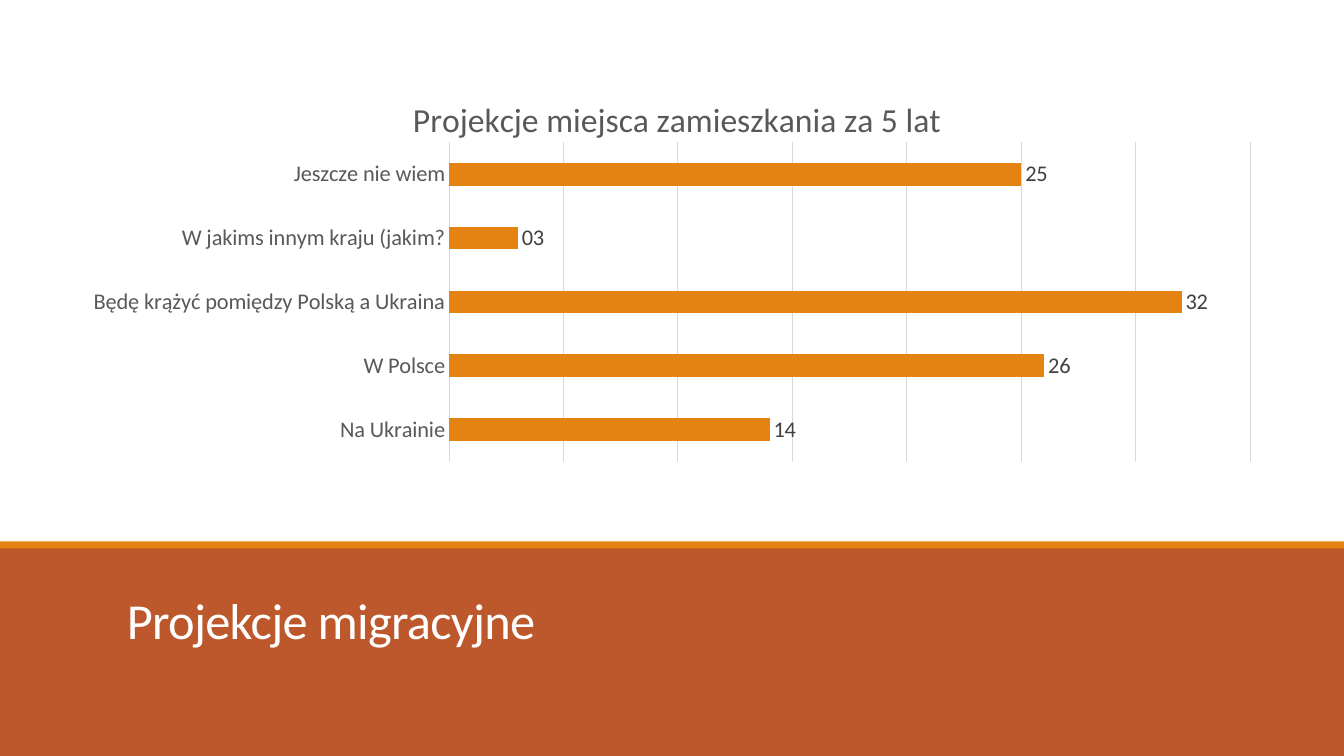
from lxml import etree
from pptx import Presentation, util as u
from pptx.chart.data import CategoryChartData
from pptx.dml.color import RGBColor
from pptx.enum import chart as charts, shapes, text
from pptx.oxml import ns

ORANGE = RGBColor(0xE4, 0x83, 0x12)
RUST = RGBColor(0xBD, 0x58, 0x2C)
WHITE = RGBColor(0xFF, 0xFF, 0xFF)
GRID_GREY = RGBColor(0xD9, 0xD9, 0xD9)
TEXT_GREY = RGBColor(0x59, 0x59, 0x59)
LABEL_GREY = RGBColor(0x40, 0x40, 0x40)

RESIDENCE_PLANS = {
    "Na Ukrainie": 14,
    "W Polsce": 26,
    "Będę krążyć pomiędzy Polską a Ukraina": 32,
    "W jakims innym kraju (jakim?": 3,
    "Jeszcze nie wiem": 25,
}


def place_chart_part(part, index, mode="edge", **shares):
    """Fix a title or plot area at shares of the chart's size."""
    for old in part.findall(ns.qn("c:layout")):
        part.remove(old)
    layout = etree.Element(ns.qn("c:layout"))
    manual = etree.SubElement(layout, ns.qn("c:manualLayout"))
    if "w" in shares:
        etree.SubElement(manual, ns.qn("c:layoutTarget"), val="inner")
    for tag in ("xMode", "yMode"):
        etree.SubElement(manual, ns.qn(f"c:{tag}"), val=mode)
    for tag, share in shares.items():
        etree.SubElement(manual, ns.qn(f"c:{tag}"), val=str(share))
    part.insert(index, layout)


class SlideBuilder:
    """Style and slide; lengths are columns and rows of a one-inch grid."""

    FONT = "Calibri"
    COLUMNS, ROWS = 13.33, 7.5

    def __init__(self):
        self.deck = Presentation()
        self.deck.slide_width = u.Inches(self.COLUMNS)
        self.deck.slide_height = u.Inches(self.ROWS)
        self.slide = self.deck.slides.add_slide(self.deck.slide_layouts[6])

    def box(self, *cells):
        return [u.Inches(cell) for cell in cells]

    def style(self, font, size, color):
        font.name, font.size, font.bold = self.FONT, u.Pt(size), False
        font.color.rgb = color

    def band(self, top, height, color):
        """Fill the slide's whole width with one colour."""
        band = self.slide.shapes.add_shape(
            shapes.MSO_SHAPE.RECTANGLE, *self.box(0, top, self.COLUMNS, height))
        band.shadow.inherit = False
        band.fill.solid()
        band.fill.fore_color.rgb = color
        band.line.fill.background()

    def heading(self, wording, *cells):
        frame = self.slide.shapes.add_textbox(*self.box(*cells)).text_frame
        frame.word_wrap = True
        frame.vertical_anchor = text.MSO_ANCHOR.BOTTOM
        frame.text = wording
        paragraph = frame.paragraphs[0]
        paragraph.line_spacing = 0.85
        run = paragraph.runs[0]
        self.style(run.font, 36, WHITE)
        run.font._element.set("spc", "-50")

    def bar_chart(self, title, values, *cells):
        data = CategoryChartData()
        data.categories = list(values)
        data.add_series("Series 1", list(values.values()))
        chart = self.slide.shapes.add_chart(
            charts.XL_CHART_TYPE.BAR_CLUSTERED, *self.box(*cells), data).chart
        chart.has_legend = False
        self.style(chart.font, 16, TEXT_GREY)

        chart.has_title = True
        title_frame = chart.chart_title.text_frame
        title_frame.text = title
        self.style(title_frame.paragraphs[0].runs[0].font, 24, TEXT_GREY)
        place_chart_part(chart.chart_title._element, 1, x=0.28, y=0.05)
        plot_area = chart._chartSpace.chart.plotArea
        place_chart_part(plot_area, 0, x=0.315, y=0.18, w=0.665, h=0.8)

        answers, scale = chart.category_axis, chart.value_axis
        answers.major_tick_mark = charts.XL_TICK_MARK.NONE
        self.style(answers.tick_labels.font, 16, TEXT_GREY)
        scale.visible = False
        scale.minimum_scale, scale.maximum_scale, scale.major_unit = 0, 35, 5
        for line in (answers.format.line, scale.major_gridlines.format.line):
            line.color.rgb = GRID_GREY
            line.width = u.Pt(0.75)

        bars = chart.plots[0]
        bars.gap_width = 182
        bars.vary_by_categories = False
        bars.series[0].format.fill.solid()
        bars.series[0].format.fill.fore_color.rgb = ORANGE
        bars.has_data_labels = True
        labels = bars.data_labels
        labels.show_value = True
        labels.position = charts.XL_LABEL_POSITION.OUTSIDE_END
        labels.number_format, labels.number_format_is_linked = "00", False
        self.style(labels.font, 16, LABEL_GREY)


def main():
    builder = SlideBuilder()
    builder.band(5.42, 2.08, RUST)
    builder.heading("Projekcje migracyjne", 1.16, 5.6, 11, 0.9)
    builder.band(5.37, 0.07, ORANGE)
    builder.bar_chart("Projekcje miejsca zamieszkania za 5 lat",
                      RESIDENCE_PLANS, 0.69, 0.7, 11.95, 3.96)
    builder.deck.save("out.pptx")


if __name__ == "__main__":
    main()
